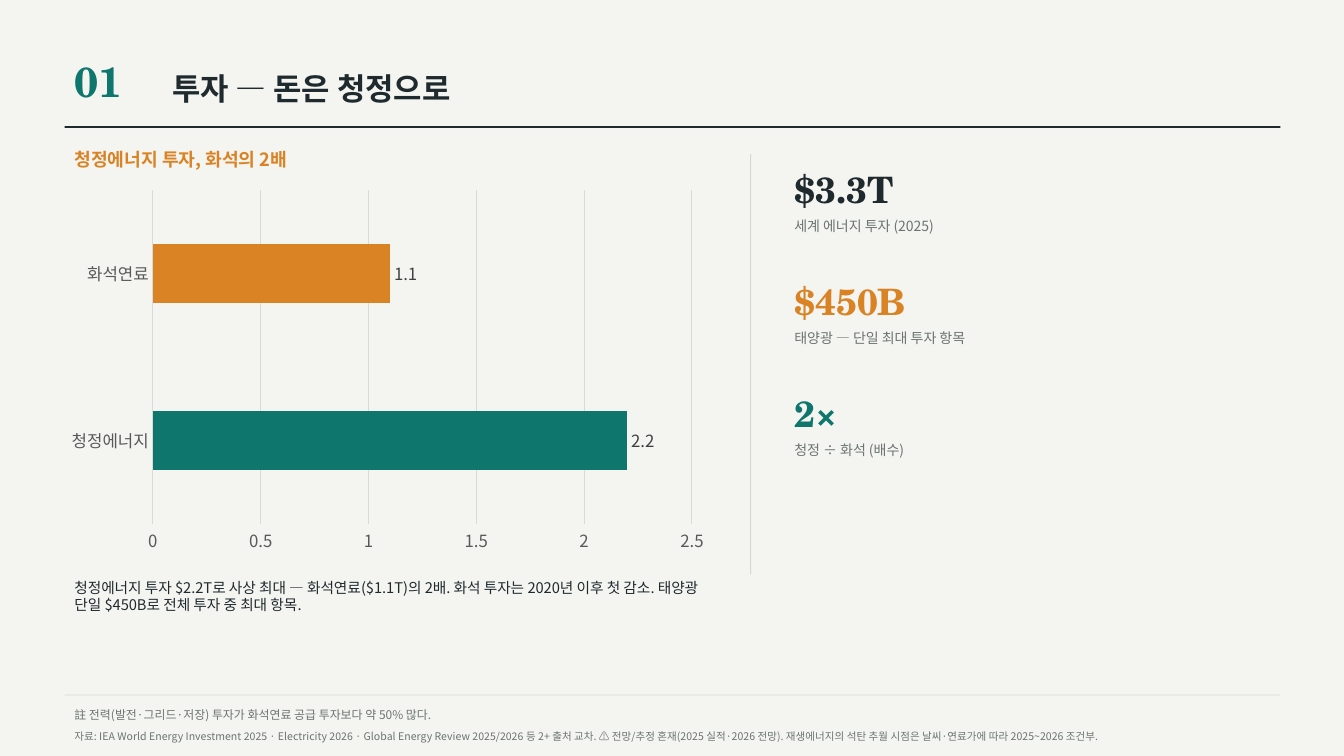
from lxml.etree import Element
from pptx import Presentation
from pptx.chart.data import CategoryChartData
from pptx.dml.color import RGBColor
from pptx.enum.chart import XL_CHART_TYPE as ChartType
from pptx.enum.chart import XL_LABEL_POSITION as LabelPosition
from pptx.enum.chart import XL_TICK_MARK as TickMark
from pptx.enum.shapes import MSO_SHAPE as Shape
from pptx.enum.text import MSO_ANCHOR as Anchor
from pptx.enum.text import MSO_AUTO_SIZE as AutoSize
from pptx.enum.text import PP_ALIGN as Align
from pptx.oxml.ns import qn
from pptx.util import Inches, Pt

COLORS = {
    "paper": "F4F4F1",
    "ink": "1F2A2E",
    "teal": "0F766E",
    "orange": "D98324",
    "muted": "6B7470",
    "rule": "D9D7CE",
    "grid": "D9D9D9",
    "axis": "595959",
    "value": "404040",
    "black": "000000",
}
SANS = "Noto Sans CJK KR"
SERIF = "TeX Gyre Schola"
LEFT = 0.64
FULL_WIDTH = 12.06
STATS_LEFT = 7.78


def color(key):
    return RGBColor.from_string(COLORS[key])


def add_east_asian_font(element):
    for latin in list(element.iter(qn("a:latin"))):
        latin.addnext(Element(qn("a:ea"), typeface=latin.get("typeface")))


class SlideBuilder:
    def __init__(self, presentation):
        self.slide = presentation.slides.add_slide(presentation.slide_layouts[5])
        fill = self.slide.background.fill
        fill.solid()
        fill.fore_color.rgb = color("paper")

    def style_font(self, font, size, ink, face=SANS, bold=False):
        font.name = face
        font.size = Pt(size)
        font.bold = bold
        font.color.rgb = color(ink)

    def fill_text(self, box, text, size, ink, face, bold, wrap):
        frame = box.text_frame
        frame.text = text
        frame.word_wrap = wrap
        frame.auto_size = AutoSize.SHAPE_TO_FIT_TEXT
        frame.vertical_anchor = Anchor.TOP
        paragraph = frame.paragraphs[0]
        paragraph.alignment = Align.LEFT
        run = paragraph.runs[0]
        self.style_font(run.font, size, ink, face, bold)
        add_east_asian_font(run._r)

    def title(self, text, place, size, ink):
        heading = self.slide.shapes.title
        heading.left, heading.top, heading.width, heading.height = map(Inches, place)
        self.fill_text(heading, text, size, ink, SANS, True, False)

    def text(self, text, place, size, ink, face=SANS, bold=False, wrap=False):
        box = self.slide.shapes.add_textbox(*map(Inches, place))
        self.fill_text(box, text, size, ink, face, bold, wrap)

    def rule(self, place, ink):
        bar = self.slide.shapes.add_shape(Shape.RECTANGLE, *map(Inches, place))
        bar.shadow.inherit = False
        bar.fill.solid()
        bar.fill.fore_color.rgb = color(ink)
        bar.line.fill.background()

    def stat(self, figure, caption, top, width, ink):
        self.text(figure, (STATS_LEFT, top, width, 0.54), 26, ink, SERIF, True)
        self.text(caption, (STATS_LEFT, top + 0.5, 4.92, 0.27), 10, "muted", wrap=True)

    def bar_chart(self, values, bar_inks, place):
        data = CategoryChartData()
        data.categories = list(values)
        data.add_series("Series 1", list(values.values()))
        chart = self.slide.shapes.add_chart(
            ChartType.BAR_CLUSTERED, *map(Inches, place), data
        ).chart
        self.style_font(chart.font, 10, "black")
        chart.has_legend = False
        chart.has_title = False

        for axis in (chart.category_axis, chart.value_axis):
            axis.major_tick_mark = axis.minor_tick_mark = TickMark.NONE
            self.style_font(axis.tick_labels.font, 12, "axis")
        chart.value_axis.minimum_scale = 0
        chart.value_axis.maximum_scale = 2.5
        chart.value_axis.major_unit = 0.5
        chart.value_axis.format.line.fill.background()
        chart.value_axis.has_major_gridlines = True
        for line in (
            chart.category_axis.format.line,
            chart.value_axis.major_gridlines.format.line,
        ):
            line.color.rgb = color("grid")
            line.width = Pt(0.75)

        plot = chart.plots[0]
        plot.gap_width = 182
        plot.vary_by_categories = False
        series = plot.series[0]
        for index, ink in enumerate(bar_inks):
            fill = series.points[index].format.fill
            fill.solid()
            fill.fore_color.rgb = color(ink)
        labels = series.data_labels
        labels.show_value = True
        labels.position = LabelPosition.OUTSIDE_END
        self.style_font(labels.font, 12, "value")
        add_east_asian_font(chart._chartSpace)


def main():
    presentation = Presentation()
    presentation.slide_width = Inches(13.33)
    presentation.slide_height = Inches(7.5)
    page = SlideBuilder(presentation)

    page.text("01", (LEFT, 0.5, 0.7, 0.61), 30, "teal", SERIF, True)
    page.title("투자 — 돈은 청정으로", (1.61, 0.64, 3.31, 0.47), 22, "ink")
    page.rule((LEFT, 1.25, FULL_WIDTH, 0.02), "ink")

    page.text("청정에너지 투자, 화석의 2배", (LEFT, 1.42, 2.55, 0.32), 13, "orange", bold=True)
    page.bar_chart(
        {"청정에너지": 2.2, "화석연료": 1.1}, ("teal", "orange"), (0.58, 1.81, 6.53, 3.75)
    )
    page.text(
        "청정에너지 투자 $2.2T로 사상 최대 — 화석연료($1.1T)의 2배. "
        "화석 투자는 2020년 이후 첫 감소. 태양광 단일 $450B로 전체 투자 중 최대 항목.",
        (LEFT, 5.69, 6.53, 0.45), 10.5, "ink", wrap=True,
    )

    page.rule((7.44, 1.53, 0.01, 4.17), "rule")
    stats = (
        ("$3.3T", "세계 에너지 투자 (2025)", 1.26, "ink"),
        ("$450B", "태양광 — 단일 최대 투자 항목", 1.42, "orange"),
        ("2×", "청정 ÷ 화석 (배수)", 0.69, "teal"),
    )
    for row, (figure, caption, width, ink) in enumerate(stats):
        page.stat(figure, caption, 1.61 + 1.11 * row, width, ink)

    page.rule((LEFT, 6.89, FULL_WIDTH, 0.01), "rule")
    page.text(
        "註 전력(발전·그리드·저장) 투자가 화석연료 공급 투자보다 약 50% 많다.",
        (LEFT, 6.97, 4.06, 0.24), 8.5, "muted",
    )
    page.text(
        "자료: IEA World Energy Investment 2025 · Electricity 2026 · "
        "Global Energy Review 2025/2026 등 2+ 출처 교차. "
        "⚠ 전망/추정 혼재(2025 실적·2026 전망). "
        "재생에너지의 석탄 추월 시점은 날씨·연료가에 따라 2025~2026 조건부.",
        (LEFT, 7.19, 10.8, 0.23), 7.5, "muted", wrap=True,
    )
    presentation.save("out.pptx")


if __name__ == "__main__":
    main()
